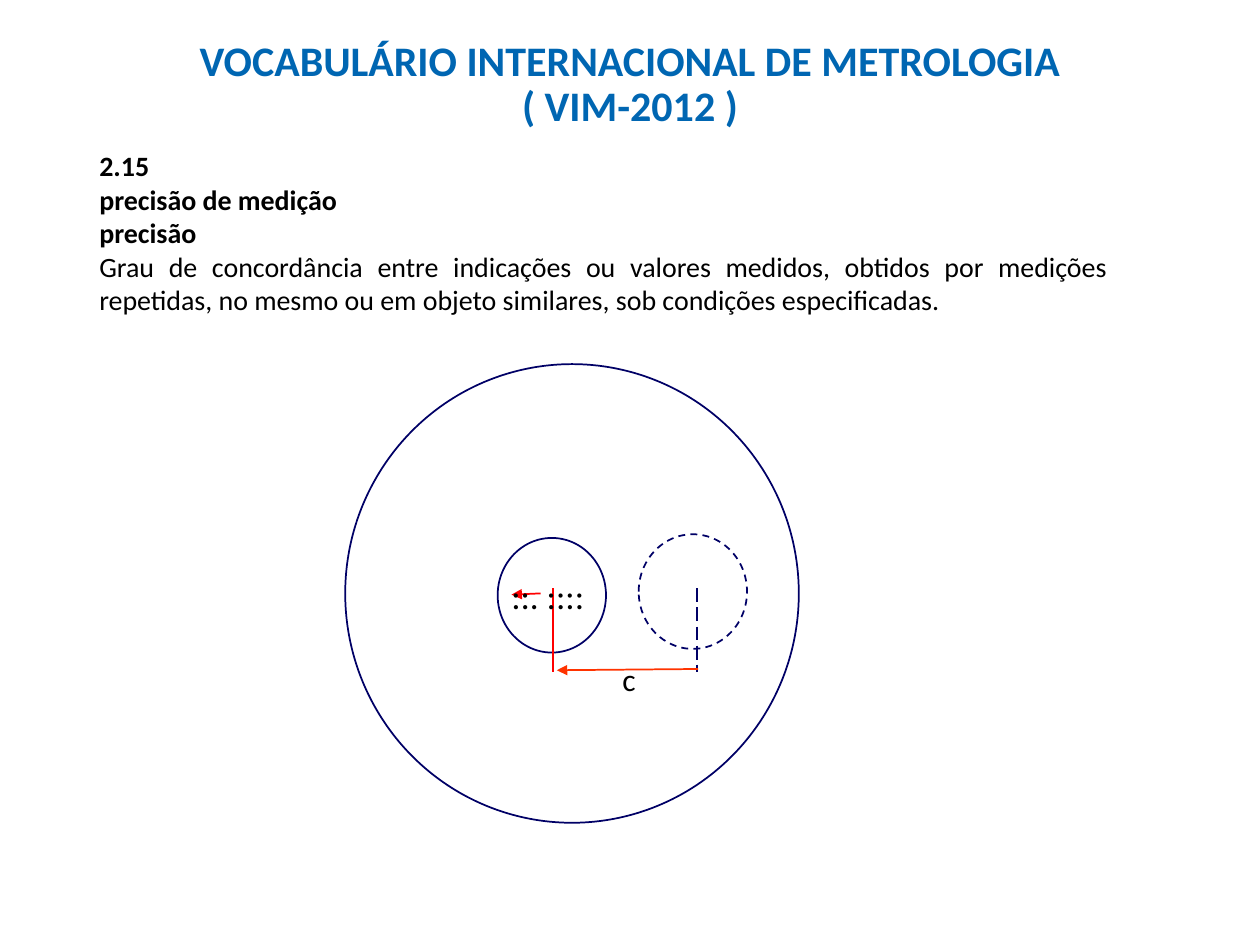
import pptx
import pptx.util
import pptx.dml.color
import pptx.enum.dml
import pptx.enum.shapes
import pptx.enum.text
import pptx.oxml.ns
from lxml import etree

Pt = pptx.util.Pt
ALIGN = pptx.enum.text.PP_ALIGN
DASH = pptx.enum.dml.MSO_LINE
COLORS = {"title": "0066B2", "text": "000000", "circle": "000066",
          "mean": "FF0000", "shift": "FF3300"}

# Content: boxes are left, top, width, height; lines are start and end points
TITLE = ["VOCABULÁRIO INTERNACIONAL DE METROLOGIA", "( VIM-2012 )"]
TERMS = ["2.15", "precisão de medição", "precisão"]
DEFINITION = ("Grau de concordância entre indicações ou valores medidos, obtidos por "
              "medições repetidas, no mesmo ou em objeto similares, sob condições "
              "especificadas.")
READINGS = "::. ::::"
SHIFT_LABEL = "c"

SMALL = (61.9, 65.5)
CIRCLES = [
    ((197.3, 208.1, 259.2, 262.1), None),
    ((365, 305.3, *SMALL), DASH.DASH),
    ((284.4, 307.4, *SMALL), None),
]
AXIS_TOP, AXIS_BOTTOM = 336.2, 383.8
LINES = [
    ((308.9, 339.1), (292.3, 339.8), "mean", None, True),
    ((316.1, AXIS_TOP), (316.1, AXIS_BOTTOM), "mean", None, False),
    ((398.2, AXIS_TOP), (398.2, AXIS_BOTTOM), "circle", DASH.LONG_DASH, False),
    ((398.9, 382.3), (318.2, 383), "shift", None, True),
]


def write(frame, lines, size, color="text", bold_lines=0, align=ALIGN.LEFT,
          spacing=None, wrap=True):
    frame.word_wrap = wrap
    frame.vertical_anchor = pptx.enum.text.MSO_ANCHOR.TOP
    frame.auto_size = pptx.enum.text.MSO_AUTO_SIZE.NONE
    for index, line in enumerate(lines):
        paragraph = frame.paragraphs[0] if index == 0 else frame.add_paragraph()
        paragraph.alignment = align
        paragraph.space_before = Pt(0)
        paragraph.line_spacing = spacing
        run = paragraph.add_run()
        run.text = line
        run.font.name = "Calibri"
        run.font.size = Pt(size)
        run.font.bold = index < bold_lines
        run.font.color.rgb = pptx.dml.color.RGBColor.from_string(COLORS[color])


def place(box):
    return [Pt(length) for length in box]


def style_line(line, color, dash):
    line.color.rgb = pptx.dml.color.RGBColor.from_string(COLORS[color])
    line.width = Pt(1)
    if dash is not None:
        line.dash_style = dash


def add_line(shapes, start, end, color, dash, arrow):
    connector = shapes.add_connector(
        pptx.enum.shapes.MSO_CONNECTOR.STRAIGHT, *place(start + end))
    style_line(connector.line, color, dash)
    properties = connector._element.spPr
    if arrow:
        outline = properties.find(pptx.oxml.ns.qn("a:ln"))
        etree.SubElement(outline, pptx.oxml.ns.qn("a:tailEnd"), type="triangle")
    etree.SubElement(properties, pptx.oxml.ns.qn("a:effectLst"))


def main():
    deck = pptx.Presentation()
    deck.slide_width, deck.slide_height = Pt(720), Pt(540)
    slide = deck.slides.add_slide(deck.slide_layouts[5])
    shapes = slide.shapes

    # Title and definition
    title = shapes.title
    title.left, title.top, title.width, title.height = place((0, 19.4, 720, 59.8))
    write(title.text_frame, TITLE, 24, color="title", bold_lines=len(TITLE),
          align=ALIGN.CENTER, spacing=0.9)
    definition = shapes.add_textbox(*place((49.7, 81.4, 590.4, 104.4)))
    write(definition.text_frame, TERMS + [DEFINITION], 16, bold_lines=len(TERMS),
          align=ALIGN.JUSTIFY)

    # Target circles
    for box, dash in CIRCLES:
        circle = shapes.add_shape(pptx.enum.shapes.MSO_SHAPE.OVAL, *place(box))
        circle.shadow.inherit = False
        circle.fill.background()
        style_line(circle.line, "circle", dash)

    # Axes and arrows
    for line in LINES:
        add_line(shapes, *line)

    # Readings and label of the shift
    readings = shapes.add_textbox(*place((285.1, 324.7, 60.5, 29.5)))
    write(readings.text_frame, [READINGS], 20)
    shift = shapes.add_textbox(*place((348.5, 373.7, 20.9, 27.4)))
    write(shift.text_frame, [SHIFT_LABEL], 18, wrap=False)

    deck.save("out.pptx")


if __name__ == "__main__":
    main()
